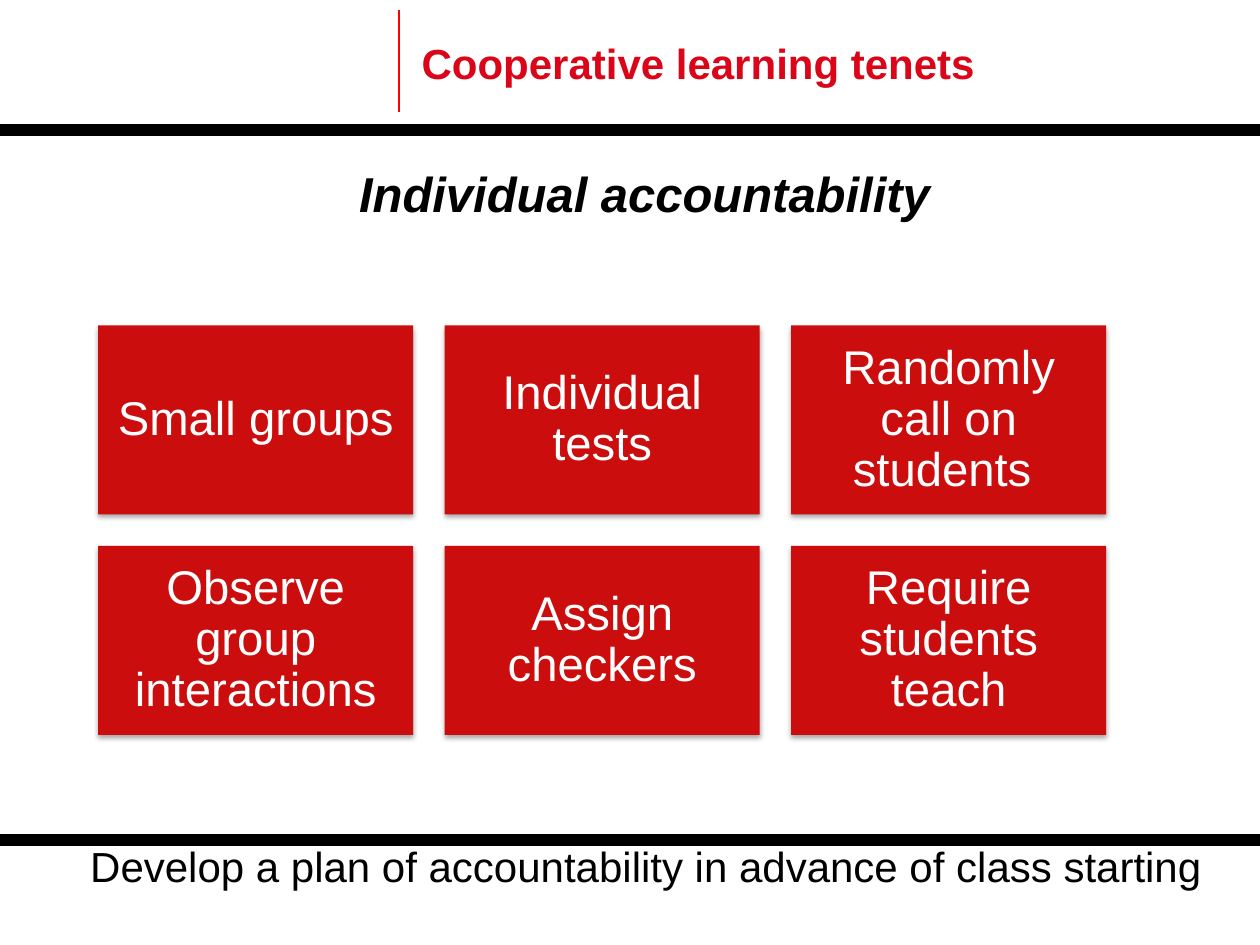
from dataclasses import dataclass

from lxml.etree import SubElement
from pptx import Presentation
from pptx.dml.color import RGBColor
from pptx.enum.shapes import MSO_CONNECTOR, MSO_SHAPE
from pptx.enum.text import MSO_ANCHOR, PP_ALIGN
from pptx.oxml import parse_xml
from pptx.oxml.ns import nsdecls, qn
from pptx.util import Cm, Pt


@dataclass(frozen=True)
class Theme:
    font: str = "Arial"
    black: RGBColor = RGBColor(0, 0, 0)
    white: RGBColor = RGBColor(255, 255, 255)
    title_red: RGBColor = RGBColor(0xDA, 0x05, 0x19)
    rule_red: RGBColor = RGBColor(255, 0, 0)
    tile_red: RGBColor = RGBColor(0xCB, 0x0D, 0x0E)
    body_size: int = 24
    tile_size: int = 27
    heading_size: int = 28


THEME = Theme()
SLIDE_WIDTH, SLIDE_HEIGHT = 25.4, 19.05
TILE_ROWS = [
    ["Small groups", "Individual tests", "Randomly call on students "],
    ["Observe group interactions", "Assign checkers", "Require students teach"],
]


def add_span(para, text, size, color, bold=False, italic=False):
    span = para.add_run()
    span.text = text
    font = span.font
    font.name, font.size, font.color.rgb = THEME.font, Pt(size), color
    font.bold, font.italic = bold, italic


def add_rule(page, start, end, color, weight):
    rule = page.shapes.add_connector(
        MSO_CONNECTOR.STRAIGHT, *(Cm(value) for value in (*start, *end)))
    rule.line.color.rgb, rule.line.width = color, Pt(weight)
    SubElement(rule._element.spPr, qn("a:effectLst"))


def add_label(page, box, text, size, color, wrap=False, align=PP_ALIGN.LEFT, **style):
    frame = page.shapes.add_textbox(*(Cm(value) for value in box)).text_frame
    frame.word_wrap = wrap
    para = frame.paragraphs[0]
    para.alignment = align
    add_span(para, text, size, color, **style)


def add_soft_shadow(shape):
    """Cast a faint shadow straight down."""
    shape.shadow.inherit = False
    effects = shape._element.spPr.find(qn("a:effectLst"))
    effects.append(parse_xml(
        f'<a:outerShdw {nsdecls("a")} blurRad="{Pt(3.1)}" dist="{Pt(1.8)}" '
        'dir="5400000" rotWithShape="0"><a:srgbClr val="000000">'
        '<a:alpha val="35000"/></a:srgbClr></a:outerShdw>'))


def add_tile(page, box, text):
    tile = page.shapes.add_shape(MSO_SHAPE.RECTANGLE, *(Cm(value) for value in box))
    tile.fill.solid()
    tile.fill.fore_color.rgb = THEME.tile_red
    tile.line.fill.background()
    add_soft_shadow(tile)
    frame = tile.text_frame
    frame.word_wrap, frame.vertical_anchor = True, MSO_ANCHOR.MIDDLE
    frame.margin_left = frame.margin_right = Cm(0.28)
    frame.margin_top = frame.margin_bottom = Cm(0.28)
    para = frame.paragraphs[0]
    para.alignment, para.line_spacing = PP_ALIGN.CENTER, 0.9
    add_span(para, text, THEME.tile_size, THEME.white)


def add_header(page, left, top, width, height):
    """Place the title beside a red rule, above a full-width black bar."""
    divider = left + 8.05
    add_rule(page, (divider, top + 0.2), (divider, top + 2.26), THEME.rule_red, 1.25)
    add_rule(page, (left, top + height), (left + width, top + height), THEME.black, 7)
    add_label(page, (divider + 0.2, top + 0.64, 11.76, 1.27),
              "Cooperative learning tenets", THEME.body_size, THEME.title_red, bold=True)


def add_tile_grid(page, left, top, width, rows):
    """Fill the width with 5:3 tiles whose gaps are a tenth of a tile."""
    columns = len(rows[0])
    tile_width = width / (columns + 0.1 * (columns - 1))
    tile_height, gap = tile_width * 0.6, tile_width * 0.1
    for row, texts in enumerate(rows):
        for column, text in enumerate(texts):
            box = (left + column * (tile_width + gap),
                   top + row * (tile_height + gap), tile_width, tile_height)
            add_tile(page, box, text)


def add_footer(page, left, top, width):
    add_rule(page, (left, top), (left + width, top), THEME.black, 7)
    add_label(page, (left + 0.64, top - 0.13, width - 0.64, 1.27),
              "Develop a plan of accountability in advance of class starting",
              THEME.body_size, THEME.black, wrap=True, align=PP_ALIGN.CENTER)


def main():
    deck = Presentation()
    deck.slide_width, deck.slide_height = Cm(SLIDE_WIDTH), Cm(SLIDE_HEIGHT)
    page = deck.slides.add_slide(deck.slide_layouts[6])
    add_header(page, 0, 0, SLIDE_WIDTH, 2.62)
    add_label(page, (6.99, 3.18, 12.4, 1.45), "Individual accountability",
              THEME.heading_size, THEME.black, bold=True, italic=True)
    add_tile_grid(page, 1.98, 6.56, 20.32, TILE_ROWS)
    add_footer(page, 0, 16.94, SLIDE_WIDTH)
    deck.save("out.pptx")


if __name__ == "__main__":
    main()
